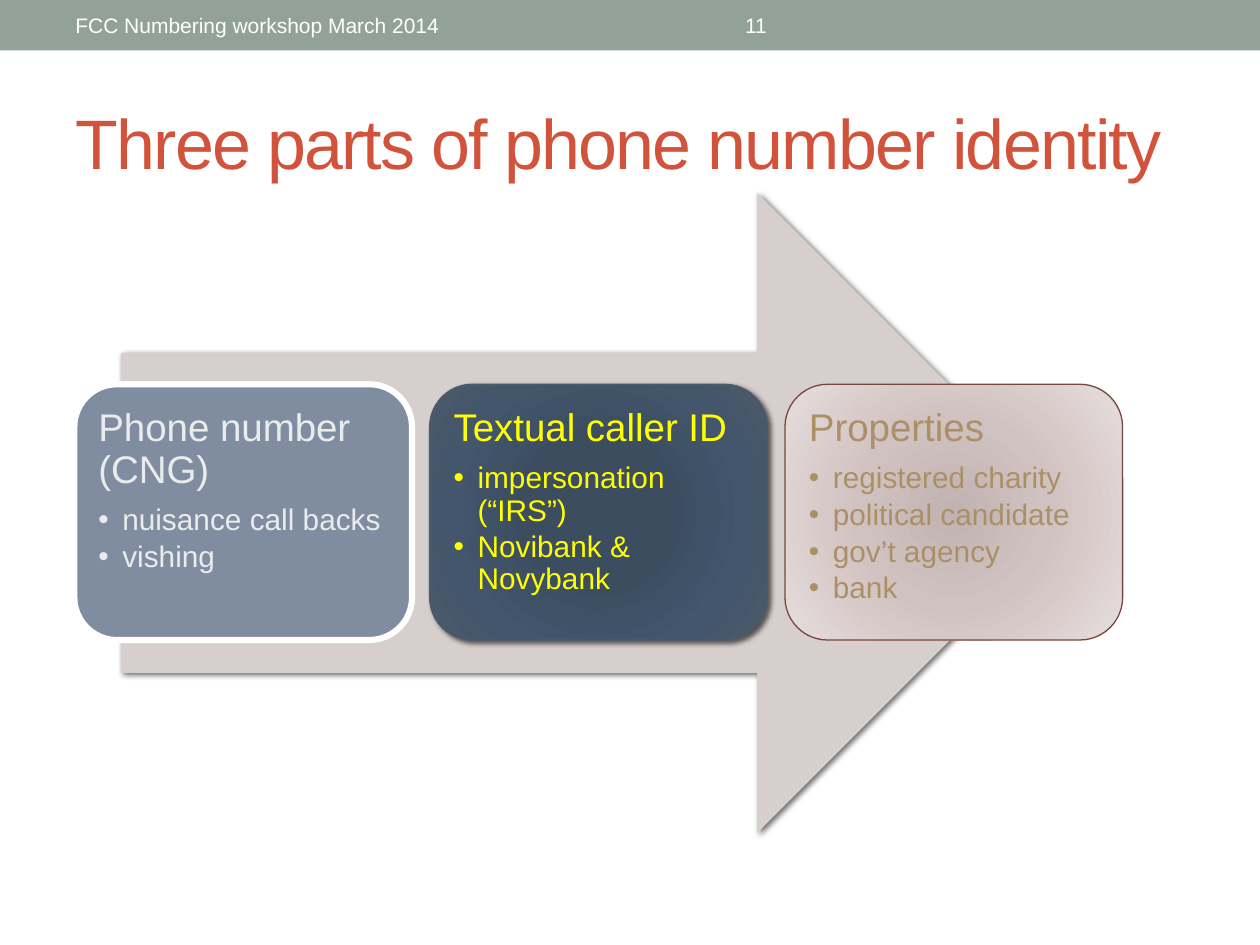
from dataclasses import dataclass

from lxml.etree import SubElement
from pptx import Presentation
from pptx.dml.color import RGBColor
from pptx.enum.shapes import MSO_SHAPE as Preset
from pptx.enum.text import MSO_ANCHOR as Anchor, PP_ALIGN as Align
from pptx.oxml.ns import qn
from pptx.util import Inches, Pt


@dataclass(frozen=True)
class Theme:
    font: str = "Arial"
    title_size: int = 40
    heading_size: int = 22
    bullet_size: int = 17
    header_size: int = 12
    band: str = "93A299"
    title: str = "D2533C"
    white: str = "FFFFFF"
    arrow: str = "D7CFCE"


THEME = Theme()
CARD_LEFT, CARD_TOP, CARD_WIDTH, CARD_HEIGHT = 0.59, 3.05, 2.68, 2.03
CARD_STEP = 2.82
CARD_PADDING = 0.1

CARDS = [
    dict(heading="Phone number (CNG)", bullets=["nuisance call backs", "vishing"],
         color="E9ECEB", fill="808DA0", line=("FFFFFF", 3.5)),
    dict(heading="Textual caller ID",
         bullets=["impersonation (“IRS”)", "Novibank & Novybank"], color="FFFF00",
         fill=[(0, "3B4D61"), (34, "3C4D60"), (70, "43566B"), (100, "4C5A6A")],
         line=("4C5A6A", 0.75), shadow=True),
    dict(heading="Properties",
         bullets=["registered charity", "political candidate", "gov’t agency", "bank"],
         color="AD8F67", fill=[(0, "C0B3B1"), (45, "D0C2C0"), (100, "E5DEDD")],
         line=("79463D", 0.75)),
]


def rgb(color):
    return RGBColor.from_string(color)


def add_element(parent, tag, **attributes):
    return SubElement(parent, qn(tag), {key: str(value) for key, value in attributes.items()})


def fill_radial(shape, stops):
    """Give the shape a circular gradient from (percent, colour) stops."""
    gradient = add_element(shape._element.spPr, "a:gradFill", rotWithShape=1)
    stop_list = add_element(gradient, "a:gsLst")
    for percent, color in stops:
        stop = add_element(stop_list, "a:gs", pos=percent * 1000)
        add_element(stop, "a:srgbClr", val=color)
    circle = add_element(gradient, "a:path", path="circle")
    add_element(circle, "a:fillToRect", l=100000, t=100000, r=100000, b=100000)


def add_shadow(shape):
    effects = shape._element.spPr.find(qn("a:effectLst"))
    outer = add_element(effects, "a:outerShdw", blurRad=Pt(3), dist=Pt(2),
                        dir=45 * 60000, rotWithShape=0)
    color = add_element(outer, "a:srgbClr", val="000000")
    add_element(color, "a:alpha", val=60000)


def add_preset(slide, preset, box, fill, line=None, shadow=False):
    shape = slide.shapes.add_shape(preset, *map(Inches, box))
    if isinstance(fill, list):
        fill_radial(shape, fill)
    else:
        shape.fill.solid()
        shape.fill.fore_color.rgb = rgb(fill)
    if line:
        color, width = line
        shape.line.color.rgb = rgb(color)
        shape.line.width = Pt(width)
    else:
        shape.line.fill.background()
    shape.shadow.inherit = False
    if shadow:
        add_shadow(shape)


def add_text_box(slide, box, anchor=Anchor.MIDDLE, inset=None):
    frame = slide.shapes.add_textbox(*map(Inches, box)).text_frame
    frame.word_wrap = True
    frame.vertical_anchor = anchor
    if inset is not None:
        frame.margin_left = frame.margin_right = Inches(inset)
        frame.margin_top = frame.margin_bottom = Inches(inset)
    return frame


def write(paragraph, text, size, color, align=None, tracking=None,
          line_spacing=None, space_after=None, bullet=False):
    """Fill a paragraph; tracking and spacing after are in points."""
    run = paragraph.add_run()
    run.text = text
    run.font.name = THEME.font
    run.font.size = Pt(size)
    run.font.color.rgb = rgb(color)
    paragraph.alignment = align
    paragraph.line_spacing = line_spacing
    if space_after is not None:
        paragraph.space_after = Pt(space_after)
    if tracking is not None:
        run._r.get_or_add_rPr().set("spc", str(tracking * 100))
    if bullet:
        paragraph.level = 1
        properties = paragraph._p.get_or_add_pPr()
        properties.set("marL", str(Inches(0.19)))
        properties.set("indent", str(-Inches(0.19)))
        add_element(properties, "a:buFont", typeface=THEME.font)
        add_element(properties, "a:buChar", char="•")


def add_label(slide, box, text, size, color, **options):
    write(add_text_box(slide, box).paragraphs[0], text, size, color, **options)


def add_card(slide, column, heading, bullets, color, **look):
    left = CARD_LEFT + column * CARD_STEP
    add_preset(slide, Preset.ROUNDED_RECTANGLE,
               (left, CARD_TOP, CARD_WIDTH, CARD_HEIGHT), **look)
    text_box = (left + CARD_PADDING, CARD_TOP + CARD_PADDING,
                CARD_WIDTH - 2 * CARD_PADDING, CARD_HEIGHT - 2 * CARD_PADDING)
    frame = add_text_box(slide, text_box, anchor=Anchor.TOP, inset=0.09)
    write(frame.paragraphs[0], heading, THEME.heading_size, color,
          line_spacing=0.9, space_after=0.35 * THEME.heading_size)
    for bullet in bullets:
        write(frame.add_paragraph(), bullet, THEME.bullet_size, color, bullet=True,
              line_spacing=0.9, space_after=0.15 * THEME.bullet_size)


def main():
    presentation = Presentation()
    presentation.slide_width, presentation.slide_height = Inches(10), Inches(7.5)
    slide = presentation.slides.add_slide(presentation.slide_layouts[6])

    add_preset(slide, Preset.RECTANGLE, (0, 0, 10, 0.4), THEME.band)
    add_label(slide, (0.5, 0.58, 9, 1.08), "Three parts of phone number identity",
              THEME.title_size, THEME.title, tracking=-1)
    add_label(slide, (0.5, 0.02, 3.17, 0.36), "FCC Numbering workshop March 2014",
              THEME.header_size, THEME.white)
    add_label(slide, (3.75, 0.02, 4.5, 0.36), "11",
              THEME.header_size, THEME.white, align=Align.CENTER)

    add_preset(slide, Preset.RIGHT_ARROW, (0.96, 1.53, 7.59, 5.08), THEME.arrow, shadow=True)
    for column, card in enumerate(CARDS):
        add_card(slide, column, **card)

    presentation.save("out.pptx")


if __name__ == "__main__":
    main()
